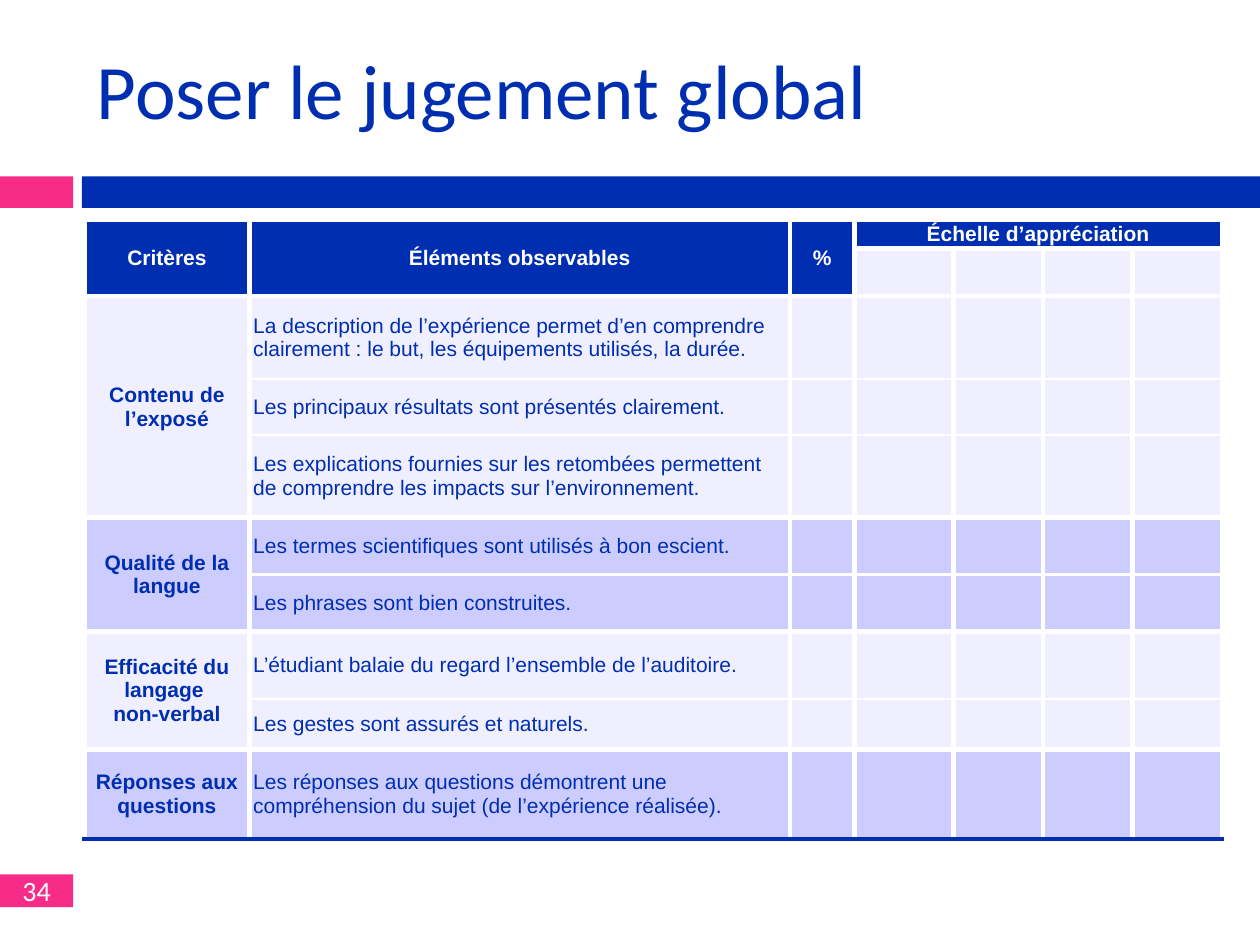
"""Build the slide with the oral presentation assessment grid."""
from dataclasses import dataclass

from lxml import etree
from pptx import Presentation, util as u
from pptx.dml.color import RGBColor
from pptx.enum import shapes, text
from pptx.oxml import ns


@dataclass(frozen=True)
class Theme:
    blue: str = "002EB0"
    pink: str = "F82C88"
    white: str = "FFFFFF"
    bands: tuple = ("EFEFFF", "CCCCFF")
    title_font: str = "Calibri"
    table_font: str = "Arial"
    title_size: int = 44
    number_size: int = 16
    table_size: int = 12
    thick: float = 3
    thin: float = 1.5


THEME = Theme()
WIDTH, HEIGHT = 10, 7.5
TITLE = "Poser le jugement global"
NUMBER = "34"
HEADERS = ["Critères", "Éléments observables", "%", "Échelle d’appréciation"]
HEADER_HEIGHTS = [0.23, 0.38]
COLUMNS = [1.31, 4.29, 0.51, 0.79, 0.71, 0.71, 0.71]
GROUPS = [
    ("Contenu de l’exposé", [
        ("La description de l’expérience permet d’en comprendre clairement : "
         "le but, les équipements utilisés, la durée.", 0.66),
        ("Les principaux résultats sont présentés clairement.", 0.44),
        ("Les explications fournies sur les retombées permettent "
         "de comprendre les impacts sur l’environnement.", 0.66)]),
    ("Qualité de la langue", [
        ("Les termes scientifiques sont utilisés à bon escient.", 0.45),
        ("Les phrases sont bien construites.", 0.45)]),
    ("Efficacité du langage \nnon-verbal", [
        ("L’étudiant balaie du regard l’ensemble de l’auditoire.", 0.54),
        ("Les gestes sont assurés et naturels.", 0.4)]),
    ("Réponses aux questions", [
        ("Les réponses aux questions démontrent une compréhension "
         "du sujet (de l’expérience réalisée).", 0.71)]),
]
MARGIN, TAB_WIDTH = 0.65, 0.58
BAR_TOP, BAR_HEIGHT = 1.4, 0.25
TABLE_LEFT, TABLE_TOP = 0.67, 1.74


def write(paragraph, words, font, size, color, bold=False, align=text.PP_ALIGN.LEFT):
    paragraph.text = words
    paragraph.alignment = align
    paragraph.font.name = font
    paragraph.font.size = u.Pt(size)
    paragraph.font.bold = bold
    paragraph.font.color.rgb = RGBColor.from_string(color)


def add_block(slide, left, top, width, height, color):
    shape = slide.shapes.add_shape(shapes.MSO_SHAPE.RECTANGLE,
                                   *map(u.Inches, (left, top, width, height)))
    shape.shadow.inherit = False
    shape.fill.solid()
    shape.fill.fore_color.rgb = RGBColor.from_string(color)
    shape.line.fill.background()
    return shape


def style_cell(cell, fill, top=THEME.thick, bottom=THEME.thick, bottom_color=THEME.white):
    cell.margin_left = cell.margin_right = u.Inches(0.03)
    cell.margin_top = cell.margin_bottom = 0
    cell.vertical_anchor = text.MSO_ANCHOR.MIDDLE
    properties = cell._tc.get_or_add_tcPr()
    edges = [("L", THEME.thick, THEME.white), ("R", THEME.thick, THEME.white),
             ("T", top, THEME.white), ("B", bottom, bottom_color)]
    for side, width, color in edges:
        line = etree.SubElement(properties, ns.qn(f"a:ln{side}"), w=str(u.Pt(width)))
        solid = etree.SubElement(line, ns.qn("a:solidFill"))
        etree.SubElement(solid, ns.qn("a:srgbClr"), val=color)
    cell.fill.solid()
    cell.fill.fore_color.rgb = RGBColor.from_string(fill)


def write_cell(cell, words, color, bold=True, align=text.PP_ALIGN.CENTER):
    write(cell.text_frame.paragraphs[0], words, THEME.table_font, THEME.table_size,
          color, bold, align)


def fill_header(table):
    scale = len(HEADERS) - 1
    for column in range(len(COLUMNS)):
        style_cell(table.cell(0, column), THEME.blue)
        style_cell(table.cell(1, column), THEME.blue if column < scale else THEME.bands[0])
    for column, words in enumerate(HEADERS):
        end = table.cell(1, column) if column < scale else table.cell(0, len(COLUMNS) - 1)
        table.cell(0, column).merge(end)
        write_cell(table.cell(0, column), words, THEME.white)


def fill_groups(table):
    row = len(HEADER_HEIGHTS)
    for index, (criterion, elements) in enumerate(GROUPS):
        first, last = row, row + len(elements) - 1
        fill = THEME.bands[index % 2]
        closing = THEME.blue if index == len(GROUPS) - 1 else THEME.white
        for row, (element, _) in enumerate(elements, first):
            style_cell(table.cell(row, 0), fill, bottom_color=closing)
            for column in range(1, len(COLUMNS)):
                style_cell(table.cell(row, column), fill,
                           THEME.thick if row == first else THEME.thin,
                           THEME.thick if row == last else THEME.thin, closing)
            write_cell(table.cell(row, 1), element, THEME.blue, False, text.PP_ALIGN.LEFT)
        if last > first:
            table.cell(first, 0).merge(table.cell(last, 0))
        write_cell(table.cell(first, 0), criterion, THEME.blue)
        row = last + 1


def add_grid(slide):
    heights = HEADER_HEIGHTS + [height for _, elements in GROUPS for _, height in elements]
    table = slide.shapes.add_table(
        len(heights), len(COLUMNS), u.Inches(TABLE_LEFT), u.Inches(TABLE_TOP),
        u.Inches(sum(COLUMNS)), u.Inches(sum(heights))).table
    table.first_row = table.horz_banding = False
    for column, width in zip(table.columns, COLUMNS):
        column.width = u.Inches(width)
    for row, height in zip(table.rows, heights):
        row.height = u.Inches(height)
    fill_header(table)
    fill_groups(table)


def add_title(slide):
    box = slide.shapes.add_textbox(*map(u.Inches, (TABLE_LEFT, 0.08, 8.92, 1.25)))
    box.text_frame.word_wrap = True
    box.text_frame.vertical_anchor = text.MSO_ANCHOR.MIDDLE
    write(box.text_frame.paragraphs[0], TITLE, THEME.title_font, THEME.title_size, THEME.blue)


def add_number(slide):
    frame = add_block(slide, 0, 6.94, TAB_WIDTH, 0.26, THEME.pink).text_frame
    frame.margin_top = frame.margin_bottom = 0
    frame.vertical_anchor = text.MSO_ANCHOR.MIDDLE
    write(frame.paragraphs[0], NUMBER, THEME.title_font, THEME.number_size, THEME.white,
          align=text.PP_ALIGN.CENTER)


def main():
    presentation = Presentation()
    presentation.slide_width, presentation.slide_height = u.Inches(WIDTH), u.Inches(HEIGHT)
    slide = presentation.slides.add_slide(presentation.slide_layouts[6])
    add_block(slide, 0, BAR_TOP, TAB_WIDTH, BAR_HEIGHT, THEME.pink)
    add_block(slide, MARGIN, BAR_TOP, WIDTH - MARGIN, BAR_HEIGHT, THEME.blue)
    add_number(slide)
    add_title(slide)
    add_grid(slide)
    presentation.save("out.pptx")


if __name__ == "__main__":
    main()
